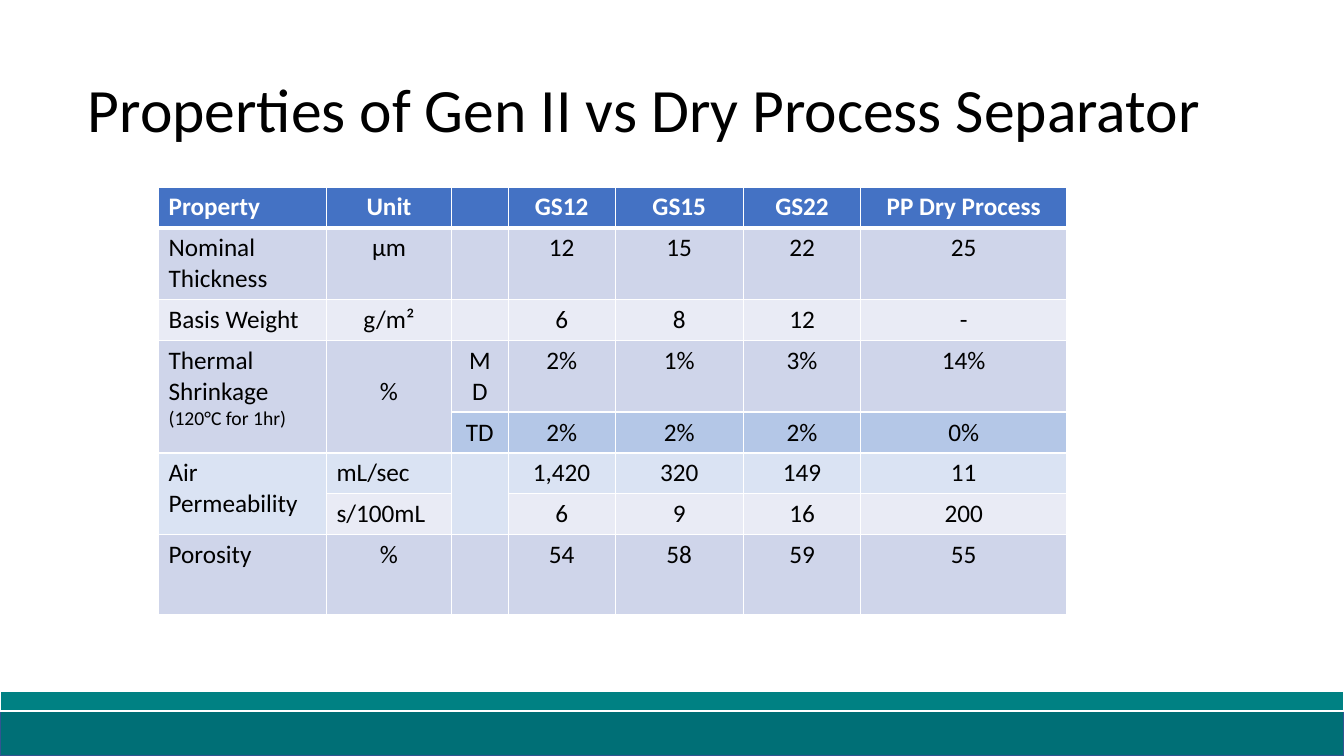
from dataclasses import dataclass

from lxml.etree import SubElement
from pptx import Presentation
from pptx.dml.color import RGBColor
from pptx.enum.shapes import MSO_SHAPE as Shape
from pptx.enum.text import MSO_ANCHOR as Anchor, MSO_AUTO_SIZE as AutoSize, PP_ALIGN as Align
from pptx.oxml.ns import qn
from pptx.util import Emu, Pt

PX = 9525  # EMU in one px; the slide is 1280 by 720 px


@dataclass(frozen=True)
class Theme:
    font: str = "Calibri"
    title_size: int = 44
    body_size: int = 18
    note_size: int = 14
    text: str = "000000"
    white: str = "FFFFFF"
    header: str = "4472C4"
    shaded: str = "CFD5EA"
    pale: str = "E9EBF5"
    transverse: str = "B4C7E7"
    air: str = "DAE3F3"
    band: str = "008183"
    footer: str = "006F76"
    footer_line: str = "325491"


THEME = Theme()

COLUMN_WIDTHS = [160, 119, 54, 102, 122, 112, 196]
ROW_HEIGHTS = [39, 39, 39, 39, 39, 34, 34, 76]
# Each row: fill colour and cell texts
ROWS = [
    (THEME.header, ["Property", "Unit", "", "GS12", "GS15", "GS22", "PP Dry Process"]),
    (THEME.shaded, ["Nominal Thickness", "μm", "", "12", "15", "22", "25"]),
    (THEME.pale, ["Basis Weight", "g/m²", "", "6", "8", "12", "-"]),
    (THEME.shaded, ["Thermal Shrinkage", "%", "MD", "2%", "1%", "3%", "14%"]),
    (THEME.transverse, ["", "", "TD", "2%", "2%", "2%", "0%"]),
    (THEME.air, ["Air Permeability", "mL/sec", "", "1,420", "320", "149", "11"]),
    (THEME.pale, ["", "s/100mL", "", "6", "9", "16", "200"]),
    (THEME.shaded, ["Porosity", "%", "", "54", "58", "59", "55"]),
]
SHRINKAGE_ROW, AIR_ROW = 3, 5
# Cells that reach down over the next row
TALL_CELLS = [(SHRINKAGE_ROW, 0), (SHRINKAGE_ROW, 1), (AIR_ROW, 0), (AIR_ROW, 2)]
LEFT_UNITS = ("mL/sec", "s/100mL")


def px(length):
    return Emu(length * PX)


def rgb(colour):
    return RGBColor.from_string(colour)


def write(para, text, size=THEME.body_size, colour=THEME.text, bold=False,
          align=Align.LEFT, spacing=None):
    """Put one formatted run of text in a paragraph."""
    para.alignment = align
    para.line_spacing = spacing
    for font in (para.font, para.add_run().font):
        font.name, font.size, font.bold = THEME.font, Pt(size), bold
        font.color.rgb = rgb(colour)
    para.runs[0].text = text


def add_band(page, top, height, fill, line):
    band = page.shapes.add_shape(Shape.RECTANGLE, 0, px(top), px(1280), px(height))
    band.shadow.inherit = False
    band.fill.solid()
    band.fill.fore_color.rgb = rgb(fill)
    band.line.color.rgb = rgb(line)
    band.line.width = Pt(1)


def add_title(page, text):
    title = page.shapes.title
    title.left, title.top, title.width, title.height = map(px, (74, 38, 1157, 139))
    frame = title.text_frame
    frame.word_wrap = True
    frame.auto_size = AutoSize.NONE
    frame.vertical_anchor = Anchor.MIDDLE
    write(frame.paragraphs[0], text, size=THEME.title_size, spacing=0.9)


def style_cell(cell, fill, top=1, bottom=1):
    """Draw white borders, in points, and fill the cell."""
    properties = cell._tc.get_or_add_tcPr()
    for side, width in (("L", 1), ("R", 1), ("T", top), ("B", bottom)):
        border = SubElement(properties, qn(f"a:ln{side}"), w=str(Pt(width)))
        paint = SubElement(border, qn("a:solidFill"))
        SubElement(paint, qn("a:srgbClr"), val=THEME.white)
    cell.fill.solid()
    cell.fill.fore_color.rgb = rgb(fill)


def add_property_table(page):
    frame = page.shapes.add_table(
        len(ROWS), len(COLUMN_WIDTHS), px(151), px(178),
        px(sum(COLUMN_WIDTHS)), px(sum(ROW_HEIGHTS)))
    table = frame.table
    table.first_row = table.horz_banding = False
    for column, width in zip(table.columns, COLUMN_WIDTHS):
        column.width = px(width)
    for row, height in zip(table.rows, ROW_HEIGHTS):
        row.height = px(height)
    for row, column in TALL_CELLS:
        table.cell(row, column).merge(table.cell(row + 1, column))

    for r, (fill, texts) in enumerate(ROWS):
        is_header = r == 0
        for c, text in enumerate(texts):
            cell = table.cell(r, c)
            cell_fill = ROWS[r - 1][0] if cell.is_spanned else fill
            style_cell(cell, cell_fill, top=3 if r == 1 else 1, bottom=3 if is_header else 1)
            to_left = c == 0 or text in LEFT_UNITS
            if text:
                write(cell.text_frame.paragraphs[0], text, bold=is_header,
                      colour=THEME.white if is_header else THEME.text,
                      align=Align.LEFT if to_left else Align.CENTER)

    # Test condition, and the shared unit set one line down
    condition = table.cell(SHRINKAGE_ROW, 0).text_frame.add_paragraph()
    write(condition, "(120°C for 1hr)", size=THEME.note_size)
    table.cell(SHRINKAGE_ROW, 1).margin_top = px(34)


def main():
    deck = Presentation()
    deck.slide_width, deck.slide_height = px(1280), px(720)
    page = deck.slides.add_slide(deck.slide_layouts.get_by_name("Title Only"))

    # Footer bands
    add_band(page, 677, 43, THEME.footer, THEME.footer_line)
    add_band(page, 658, 19, THEME.band, THEME.white)

    # Content
    add_title(page, "Properties of Gen II vs Dry Process Separator")
    add_property_table(page)
    deck.save("out.pptx")


if __name__ == "__main__":
    main()
